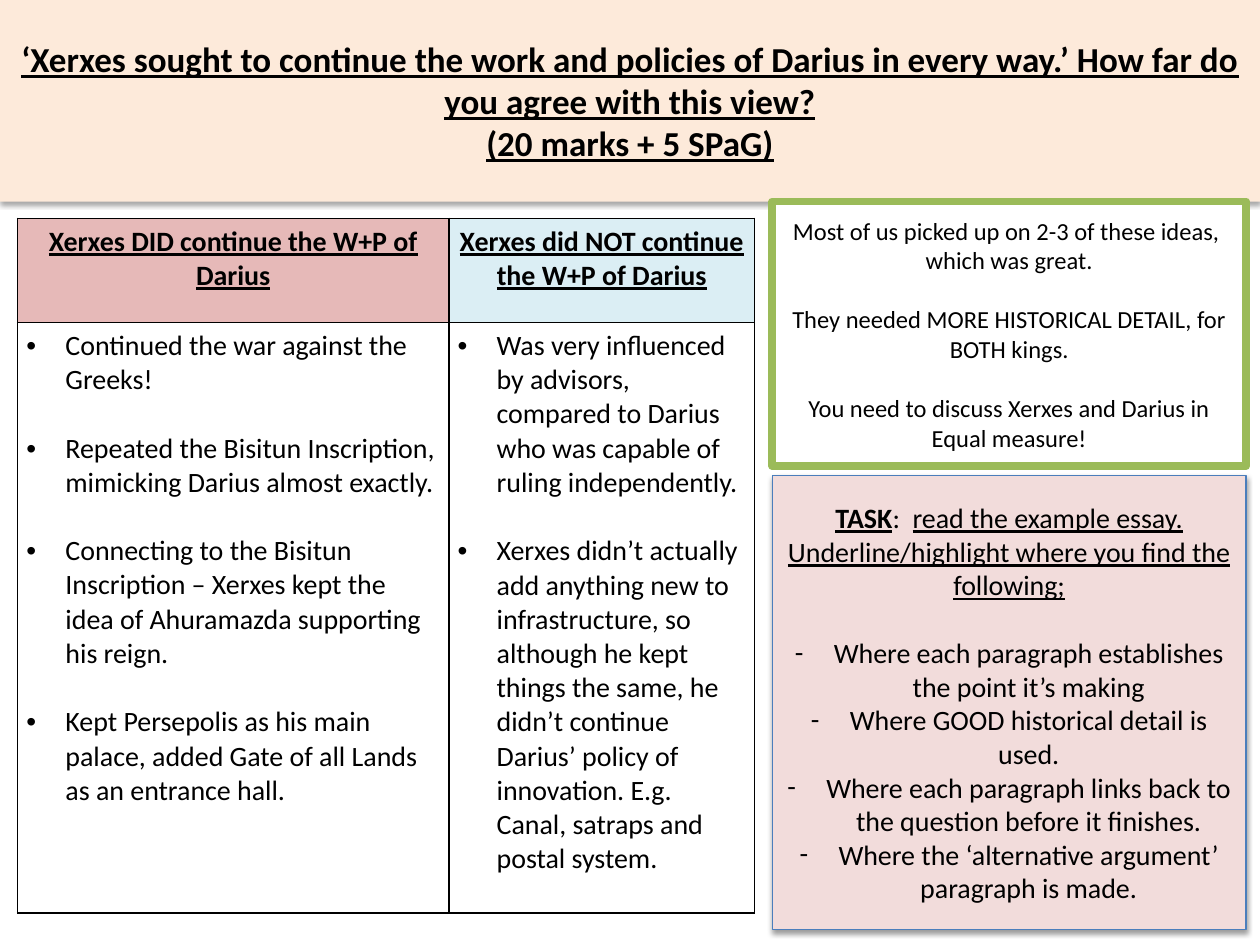
from collections import namedtuple
from dataclasses import dataclass

from lxml.etree import SubElement
from pptx import Presentation
from pptx.dml.color import RGBColor
from pptx.enum.shapes import MSO_SHAPE
from pptx.enum.text import MSO_ANCHOR, MSO_AUTO_SIZE, PP_ALIGN
from pptx.oxml.ns import qn
from pptx.util import Emu, Inches, Pt

Box = namedtuple("Box", "left top width height")
Run = namedtuple("Run", "text bold line", defaults=(False, False))
Para = namedtuple("Para", "runs bullet gap align", defaults=(None, False, PP_ALIGN.CENTER))


@dataclass(frozen=True)
class Theme:
    """Colours, type sizes and measures of the slide."""
    font: str = "Calibri"
    ink: str = "000000"
    paper: str = "FFFFFF"
    peach: str = "FDEADA"
    rose: str = "E6B9B8"
    sky: str = "DBEEF4"
    pink: str = "F2DCDB"
    green: str = "9BBB59"
    blue: str = "4B7EBC"
    title: int = 20
    body: int = 16
    note: int = 14
    leading: float = 1.22
    indent: float = 0.31


THEME = Theme()
WIDE, HIGH = Inches(10), Inches(7.5)

QUESTION = "‘Xerxes sought to continue the work and policies of Darius in every way.’ How far do you agree with this view?"
MARKS = "(20 marks + 5 SPaG)"
SIDES = [
    ("Xerxes DID continue the W+P of Darius", THEME.rose, [
        "Continued the war against the Greeks!",
        "Repeated the Bisitun Inscription, mimicking Darius almost exactly.",
        "Connecting to the Bisitun Inscription – Xerxes kept the idea of Ahuramazda supporting his reign.",
        "Kept Persepolis as his main palace, added Gate of all Lands as an entrance hall.",
    ]),
    ("Xerxes did NOT continue the W+P of Darius", THEME.sky, [
        "Was very influenced by advisors, compared to Darius who was capable of ruling independently.",
        "Xerxes didn’t actually add anything new to infrastructure, so although he kept things the same, "
        "he didn’t continue Darius’ policy of innovation. E.g. Canal, satraps and postal system.",
    ]),
]
NOTES = [
    "Most of us picked up on 2-3 of these ideas,  which was great.",
    "They needed MORE HISTORICAL DETAIL, for BOTH kings.",
    "You need to discuss Xerxes and Darius in Equal measure!",
]
TASK = [
    Run("TASK", True, True),
    Run(":  "),
    Run("read the example essay. Underline/highlight where you find the following;", False, True),
]
CHECKS = [
    "Where each paragraph establishes the point it’s making",
    "Where GOOD historical detail is used.",
    "Where each paragraph links back to the question before it finishes.",
    "Where the ‘alternative argument’ paragraph is made.",
]


def share(left, top, width, height):
    """Return a box from shares of the slide's size."""
    return Box(Emu(int(left * WIDE)), Emu(int(top * HIGH)), Emu(int(width * WIDE)), Emu(int(height * HIGH)))


def paint(fill, tone):
    """Give a fill one solid colour."""
    fill.solid()
    fill.fore_color.rgb = RGBColor.from_string(tone)


def add_run(para, run, size):
    """Add one styled run to a paragraph."""
    item = para.add_run()
    item.text = run.text
    font = item.font
    font.name, font.size, font.bold, font.underline = THEME.font, Pt(size), run.bold, run.line
    font.color.rgb = RGBColor.from_string(THEME.ink)


def write(frame, paras, size):
    """Fill a text frame with paragraphs."""
    frame.word_wrap = True
    for index, part in enumerate(paras):
        para = frame.paragraphs[0] if index == 0 else frame.add_paragraph()
        para.alignment = part.align
        if part.gap and index:
            para.space_before = Pt(size * THEME.leading)
        if part.bullet:
            props = para._p.get_or_add_pPr()
            props.set("marL", str(Inches(THEME.indent)))
            props.set("indent", str(-Inches(THEME.indent)))
            SubElement(props, qn("a:buFont"), typeface="Arial" if part.bullet == "•" else THEME.font)
            SubElement(props, qn("a:buChar"), char=part.bullet)
        for run in part.runs:
            add_run(para, run, size)


def shade(shape, alpha):
    """Cast a soft shadow straight down."""
    shape.shadow.inherit = False
    effects = shape._element.spPr.find(qn("a:effectLst"))
    outer = SubElement(effects, qn("a:outerShdw"), blurRad=str(Pt(3.1)), dist=str(Pt(1.7)),
                       dir="5400000", rotWithShape="0")
    tone = SubElement(outer, qn("a:srgbClr"), val=THEME.ink)
    SubElement(tone, qn("a:alpha"), val=str(alpha * 1000))


def edge(cell):
    """Draw a thin rule on all sides of a cell."""
    props = cell._tc.get_or_add_tcPr()
    for side in ("lnL", "lnR", "lnT", "lnB"):
        line = SubElement(props, qn(f"a:{side}"), w=str(Pt(1)))
        SubElement(SubElement(line, qn("a:solidFill")), qn("a:srgbClr"), val=THEME.ink)


def add_head(slide, box):
    """Place the essay question in the title band."""
    title = slide.shapes.title
    title.left, title.top, title.width, title.height = box
    paint(title.fill, THEME.peach)
    shade(title, 35)
    frame = title.text_frame
    frame.auto_size = MSO_AUTO_SIZE.NONE
    frame.vertical_anchor = MSO_ANCHOR.MIDDLE
    write(frame, [Para([Run(QUESTION, True, True)])], THEME.title)
    frame.paragraphs[0].add_line_break()
    add_run(frame.paragraphs[0], Run(MARKS, True, True), THEME.title)


def add_sides(slide, box):
    """Place the table that sets the two sides against each other."""
    table = slide.shapes.add_table(2, len(SIDES), *box).table
    for column, part in zip(table.columns, (0.585, 0.415)):
        column.width = Emu(int(box.width * part))
    for row, part in zip(table.rows, (0.15, 0.85)):
        row.height = Emu(int(box.height * part))
    for col, (head, tone, points) in enumerate(SIDES):
        items = [Para([Run(point)], "•", True, PP_ALIGN.LEFT) for point in points]
        cells = [(tone, [Para([Run(head, True, True)])]), (THEME.paper, items)]
        for row, (fill, paras) in enumerate(cells):
            cell = table.cell(row, col)
            cell.margin_left = cell.margin_right = Inches(0.07)
            edge(cell)
            paint(cell.fill, fill)
            write(cell.text_frame, paras, THEME.body)


def add_panel(slide, box, fill, line, weight, paras, size):
    """Place a framed panel of centred text."""
    panel = slide.shapes.add_shape(MSO_SHAPE.RECTANGLE, *box)
    panel.shadow.inherit = False
    paint(panel.fill, fill)
    paint(panel.line.fill, line)
    panel.line.width = Pt(weight)
    panel.text_frame.vertical_anchor = MSO_ANCHOR.MIDDLE
    write(panel.text_frame, paras, size)
    return panel


def add_notes(slide, box):
    """Place the class feedback."""
    paras = [Para([Run(note)], gap=True) for note in NOTES]
    add_panel(slide, box, THEME.paper, THEME.green, 4.5, paras, THEME.note)


def add_task(slide, box):
    """Place the task and its checklist."""
    checks = [Para([Run(check)], "-", index == 0) for index, check in enumerate(CHECKS)]
    panel = add_panel(slide, box, THEME.pink, THEME.blue, 0.75, [Para(TASK), *checks], THEME.body)
    shade(panel, 38)


def main():
    """Build and save the slide."""
    deck = Presentation()
    deck.slide_width, deck.slide_height = WIDE, HIGH
    slide = deck.slides.add_slide(deck.slide_layouts[5])
    add_head(slide, share(0, 0, 1, 0.2133))
    add_sides(slide, share(0.014, 0.231, 0.585, 0.735))
    add_notes(slide, share(0.613, 0.2133, 0.376, 0.28))
    add_task(slide, share(0.613, 0.503, 0.376, 0.481))
    deck.save("out.pptx")


if __name__ == "__main__":
    main()
